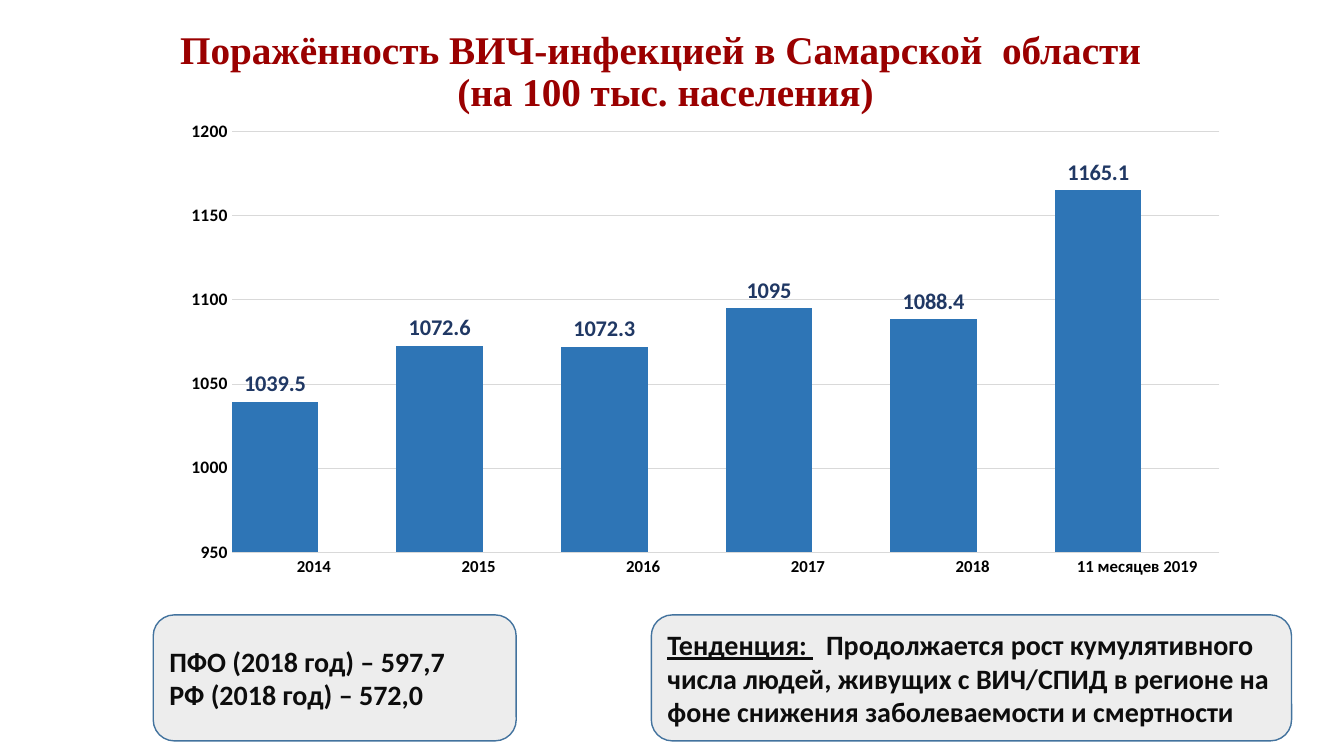
from lxml import etree
from pptx import Presentation
from pptx.chart.data import CategoryChartData as ChartData
from pptx.dml.color import RGBColor as RGB
from pptx.enum.chart import XL_CHART_TYPE as Kind, XL_LABEL_POSITION as Place
from pptx.enum.chart import XL_TICK_MARK as Tick
from pptx.enum.shapes import MSO_SHAPE as Shape
from pptx.enum.text import MSO_ANCHOR as Anchor, PP_ALIGN as Align
from pptx.oxml.ns import qn
from pptx.util import Inches, Pt

COLORS = {
    "title": "9A0000", "text": "0D0D0D", "axis": "000000", "grid": "D9D9D9",
    "card": "EDEDED", "edge": "43739E", "label": "203864",
    "bars": ["2E75B6", "ED7D31", "A5A5A5"],
}
RATES = {
    "2014": 1039.5, "2015": 1072.6, "2016": 1072.3,
    "2017": 1095, "2018": 1088.4, "11 месяцев 2019": 1165.1,
}
PLOT = {"x": 0.08, "y": 0.063, "w": 0.914, "h": 0.78}


def style(font, size, color, name="Calibri"):
    font.size, font.bold, font.name = Pt(size), True, name
    font.color.rgb = RGB.from_string(color)


def stroke(line, color, width):
    line.color.rgb = RGB.from_string(color)
    line.width = Pt(width)


def add_title(slide, box, text):
    frame = slide.shapes.add_textbox(*map(Inches, box)).text_frame
    frame.word_wrap = True
    frame.vertical_anchor = Anchor.MIDDLE
    para = frame.paragraphs[0]
    para.text = text
    para.alignment, para.line_spacing = Align.CENTER, 0.9
    for run in para.runs:
        style(run.font, 28, COLORS["title"], "Times New Roman")


def add_card(slide, box, lines, lead=""):
    """Rounded card; the lead is underlined before the first line."""
    card = slide.shapes.add_shape(Shape.ROUNDED_RECTANGLE, *map(Inches, box))
    card.shadow.inherit = False
    card.fill.solid()
    card.fill.fore_color.rgb = RGB.from_string(COLORS["card"])
    stroke(card.line, COLORS["edge"], 1)
    frame = card.text_frame
    frame.word_wrap = True
    frame.vertical_anchor = Anchor.MIDDLE
    frame.text = lead or lines[0]
    first = frame.paragraphs[0]
    if lead:
        first.runs[0].font.underline = True
        first.add_run().text = lines[0]
    for line in lines[1:]:
        frame.add_paragraph().text = line
    for para in frame.paragraphs:
        para.alignment = Align.LEFT
        for run in para.runs:
            style(run.font, 20, COLORS["text"])


def set_plot(chart):
    """Fix the inner plot area at its shares of the chart."""
    area = chart.element.find(".//" + qn("c:plotArea"))
    for old in area.findall(qn("c:layout")):
        area.remove(old)
    layout = etree.Element(qn("c:layout"))
    manual = etree.SubElement(layout, qn("c:manualLayout"))
    parts = {"layoutTarget": "inner", "xMode": "edge", "yMode": "edge", **PLOT}
    for tag, val in parts.items():
        etree.SubElement(manual, qn("c:" + tag)).set("val", str(val))
    area.insert(0, layout)


def set_axes(chart):
    cat, val = chart.category_axis, chart.value_axis
    for axis, size in ((cat, 12), (val, 12.5)):
        axis.major_tick_mark = axis.minor_tick_mark = Tick.NONE
        style(axis.tick_labels.font, size, COLORS["axis"])
    stroke(cat.format.line, COLORS["grid"], 0.75)
    val.format.line.fill.background()
    val.minimum_scale, val.maximum_scale, val.major_unit = 950, 1200, 50
    val.has_major_gridlines = True
    stroke(val.major_gridlines.format.line, COLORS["grid"], 0.75)


def add_bars(slide, box):
    data = ChartData()
    data.categories = list(RATES)
    data.add_series("Series 1", list(RATES.values()))
    for name in ("Series 2", "Series 3"):
        data.add_series(name, [None] * len(RATES))
    chart = slide.shapes.add_chart(
        Kind.COLUMN_CLUSTERED, *map(Inches, box), data).chart
    chart.has_title = chart.has_legend = False
    chart.font.size, chart.font.name = Pt(10), "Calibri"
    plot = chart.plots[0]
    plot.gap_width, plot.overlap, plot.vary_by_categories = 0, 55, False
    for series, color in zip(plot.series, COLORS["bars"]):
        series.format.fill.solid()
        series.format.fill.fore_color.rgb = RGB.from_string(color)
        series.invert_if_negative = False
    labels = plot.series[0].data_labels
    labels.show_value, labels.position = True, Place.OUTSIDE_END
    style(labels.font, 16, COLORS["label"])
    set_axes(chart)
    set_plot(chart)


def main():
    deck = Presentation()
    deck.slide_width, deck.slide_height = Inches(13.33), Inches(7.5)
    slide = deck.slides.add_slide(deck.slide_layouts[6])
    top, high = 6.1, 1.25
    add_card(slide, (1.52, top, 3.6, high),
             ["ПФО (2018 год) – 597,7", "РФ (2018 год) – 572,0"])
    add_card(slide, (6.46, top, 6.35, high),
             ["  Продолжается рост кумулятивного числа людей, живущих с "
              "ВИЧ/СПИД в регионе на фоне снижения заболеваемости и смертности"],
             lead="Тенденция: ")
    add_bars(slide, (1.44, 0.97, 10.72, 5.35))
    add_title(slide, (0.85, 0, 11.5, 1.45),
              "Поражённость ВИЧ-инфекцией в Самарской  области \n"
              "(на 100 тыс. населения)")
    deck.save("out.pptx")


if __name__ == "__main__":
    main()
